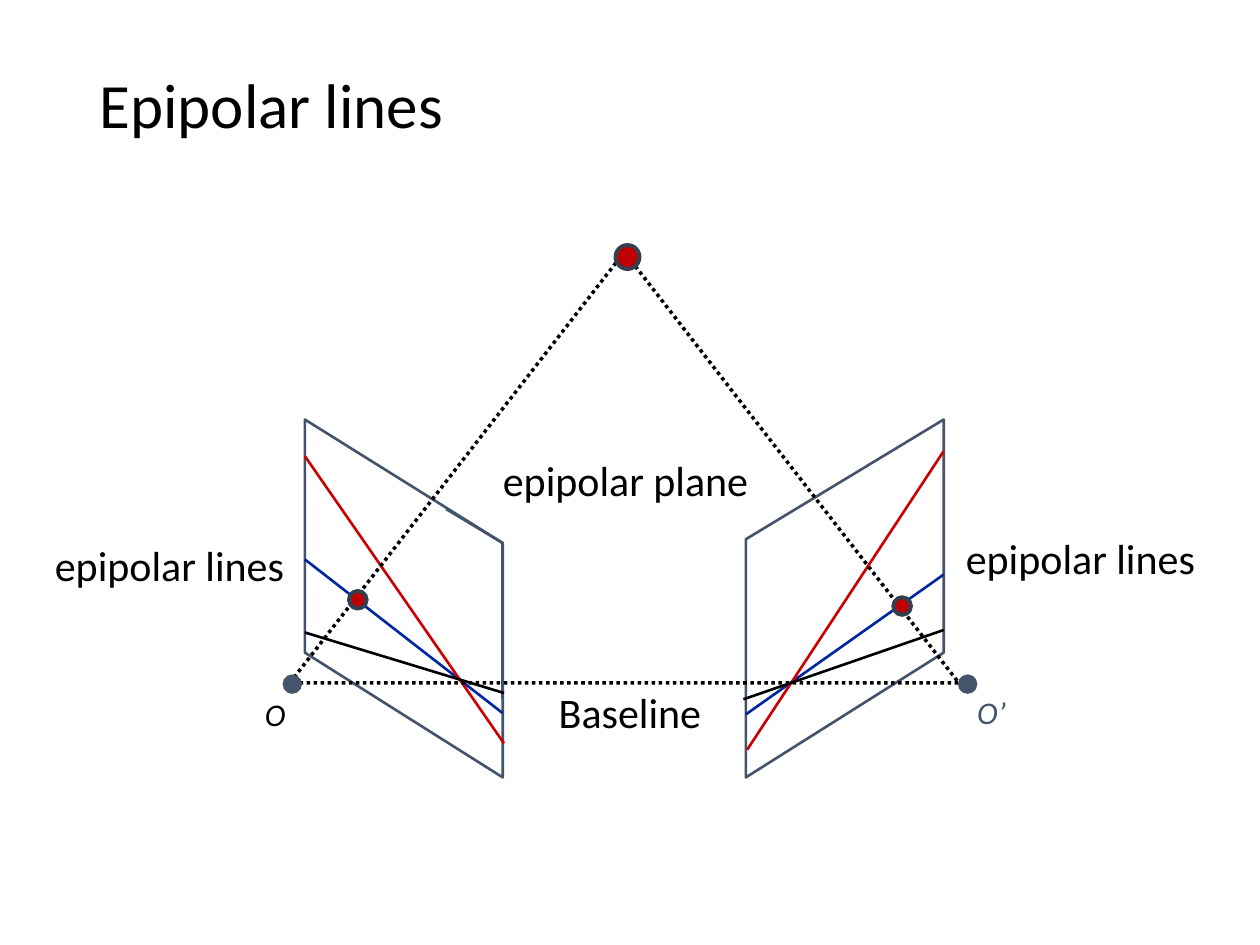
"""Build the epipolar lines slide on a grid of 100 columns by 75 rows."""
from dataclasses import dataclass
from typing import NamedTuple

from pptx import Presentation, util as u
from pptx.dml.color import RGBColor
from pptx.enum import dml, shapes, text
from pptx.oxml.ns import qn
from lxml import etree


@dataclass(frozen=True)
class Theme:
    font: str = "Calibri"
    black: str = "000000"
    slate: str = "44546A"
    rim: str = "333F50"
    blue: str = "00279F"
    red: str = "CC0000"
    point: str = "C00000"
    head: int = 36
    body: int = 24
    small: int = 18
    thin: float = 1.5


class Box(NamedTuple):
    col: float
    row: float
    cols: float
    rows: float


class Ray(NamedTuple):
    start: tuple[float, float]
    end: tuple[float, float]
    color: str


class Label(NamedTuple):
    words: str
    box: Box
    size: int
    color: str
    italic: bool = False
    wrap: bool = False


class Dot(NamedTuple):
    col: float
    row: float
    size: float
    fill: str
    rim: str
    weight: float


T = Theme()
deck = Presentation()
deck.slide_width, deck.slide_height = u.Inches(10), u.Inches(7.5)
COL, ROW = deck.slide_width / 100, deck.slide_height / 75
LEFT, NEAR, FAR, RIGHT = 24.2, 39.9, 59.2, 74.9

FRAMES = [
    [(LEFT, 33.3), (LEFT, 51.8), (NEAR, 61.7), (NEAR, 43.1)],
    [(RIGHT, 33.3), (RIGHT, 51.8), (FAR, 61.7), (FAR, 42.8)],
]
RAYS = [
    Ray((FAR, 43.1), (FAR, 54.2), T.slate),
    Ray((NEAR, 43.1), (NEAR, 55.5), T.slate),
    Ray((NEAR, 43.1), (35.4, 40.4), T.slate),
    Ray((FAR, 56.7), (RIGHT, 45.6), T.blue),
    Ray((NEAR, 56.6), (LEFT, 44.4), T.blue),
    Ray((LEFT, 36.2), (40, 59), T.red),
    Ray((LEFT, 50.2), (40, 55), T.black),
    Ray((59.3, 59.5), (RIGHT, 35.8), T.red),
    Ray((59, 55.5), (RIGHT, 50), T.black),
]
LABELS = [
    Label("epipolar lines", Box(75.3, 41.8, 20.9, 5), T.body, T.black),
    Label("epipolar lines", Box(3, 42.3, 20.9, 5), T.body, T.black),
    Label("Baseline", Box(43.1, 54, 13.8, 5), T.body, T.black),
    Label("O", Box(20, 54.7, 3.7, 4), T.small, T.black, italic=True),
    Label("O’", Box(76.5, 54.5, 4.4, 4), T.small, T.slate, italic=True),
    Label("epipolar plane", Box(38.3, 35.6, 22.7, 5), T.body, T.black, wrap=True),
]
PLANE = Box(23, 20, 53.1, 34.2)
DOTS = [
    Dot(23.2, 54.3, 1.4, T.slate, T.slate, 1),
    Dot(76.8, 54.3, 1.4, T.slate, T.slate, 1),
    Dot(71.6, 48.1, 1.4, T.point, T.rim, 2.25),
    Dot(28.4, 47.6, 1.4, T.point, T.rim, 2.25),
    Dot(49.8, 20.4, 1.9, T.point, T.rim, 2.25),
]


def spot(col: float, row: float) -> tuple[int, int]:
    """Turn a grid place into slide units."""
    return round(col * COL), round(row * ROW)


def area(box: Box) -> tuple[int, int, int, int]:
    """Turn a grid box into left, top, width and height."""
    return *spot(box.col, box.row), *spot(box.cols, box.rows)


def stroke(item, color: str, weight: float) -> None:
    """Set the colour and width of an outline."""
    item.line.color.rgb = RGBColor.from_string(color)
    item.line.width = u.Pt(weight)


def style(para, size: int, color: str, align, italic: bool = False) -> None:
    """Set the type and alignment of a paragraph."""
    para.alignment = align
    font = para.font
    font.name, font.size, font.italic = T.font, u.Pt(size), italic
    font.color.rgb = RGBColor.from_string(color)


def frame(slide, corners: list[tuple[float, float]]) -> None:
    """Draw one image plane."""
    first, *rest = [spot(*corner) for corner in corners]
    pen = slide.shapes.build_freeform(*first)
    pen.add_line_segments(rest, close=True)
    item = pen.convert_to_shape()
    item.shadow.inherit = False
    item.fill.background()
    stroke(item, T.slate, T.thin)


def ray(slide, spec: Ray) -> None:
    """Draw one straight line."""
    item = slide.shapes.add_connector(
        shapes.MSO_CONNECTOR.STRAIGHT, *spot(*spec.start), *spot(*spec.end))
    etree.SubElement(item._element.spPr, qn("a:effectLst"))
    stroke(item, spec.color, T.thin)


def label(slide, spec: Label) -> None:
    """Write one centred label."""
    body = slide.shapes.add_textbox(*area(spec.box)).text_frame
    body.word_wrap = spec.wrap
    body.auto_size = text.MSO_AUTO_SIZE.SHAPE_TO_FIT_TEXT
    body.vertical_anchor = text.MSO_ANCHOR.MIDDLE
    body.text = spec.words
    style(body.paragraphs[0], spec.size, spec.color,
          text.PP_ALIGN.CENTER, spec.italic)


def plane(slide, box: Box) -> None:
    """Draw the dotted epipolar plane."""
    item = slide.shapes.add_shape(shapes.MSO_SHAPE.ISOSCELES_TRIANGLE, *area(box))
    item.shadow.inherit = False
    item.fill.background()
    stroke(item, T.black, 2)
    item.line.dash_style = dml.MSO_LINE.ROUND_DOT


def dot(slide, spec: Dot) -> None:
    """Draw one round point about its centre."""
    half = spec.size / 2
    box = Box(spec.col - half, spec.row - half, spec.size, spec.size)
    item = slide.shapes.add_shape(shapes.MSO_SHAPE.OVAL, *area(box))
    item.shadow.inherit = False
    item.fill.solid()
    item.fill.fore_color.rgb = RGBColor.from_string(spec.fill)
    stroke(item, spec.rim, spec.weight)


def title(slide, words: str, box: Box) -> None:
    """Place and format the slide title."""
    item = slide.shapes.title
    item.left, item.top, item.width, item.height = area(box)
    body = item.text_frame
    body.text = words
    body.auto_size = text.MSO_AUTO_SIZE.NONE
    body.vertical_anchor = text.MSO_ANCHOR.MIDDLE
    para = body.paragraphs[0]
    para.line_spacing = 0.9
    style(para, T.head, T.black, text.PP_ALIGN.LEFT)


def main() -> None:
    """Draw the slide from back to front and save it."""
    slide = deck.slides.add_slide(deck.slide_layouts[5])
    title(slide, "Epipolar lines", Box(6.9, 4.1, 86.2, 9))
    for draw, specs in ((frame, FRAMES), (ray, RAYS), (label, LABELS),
                        (plane, [PLANE]), (dot, DOTS)):
        for spec in specs:
            draw(slide, spec)
    deck.save("out.pptx")


if __name__ == "__main__":
    main()
